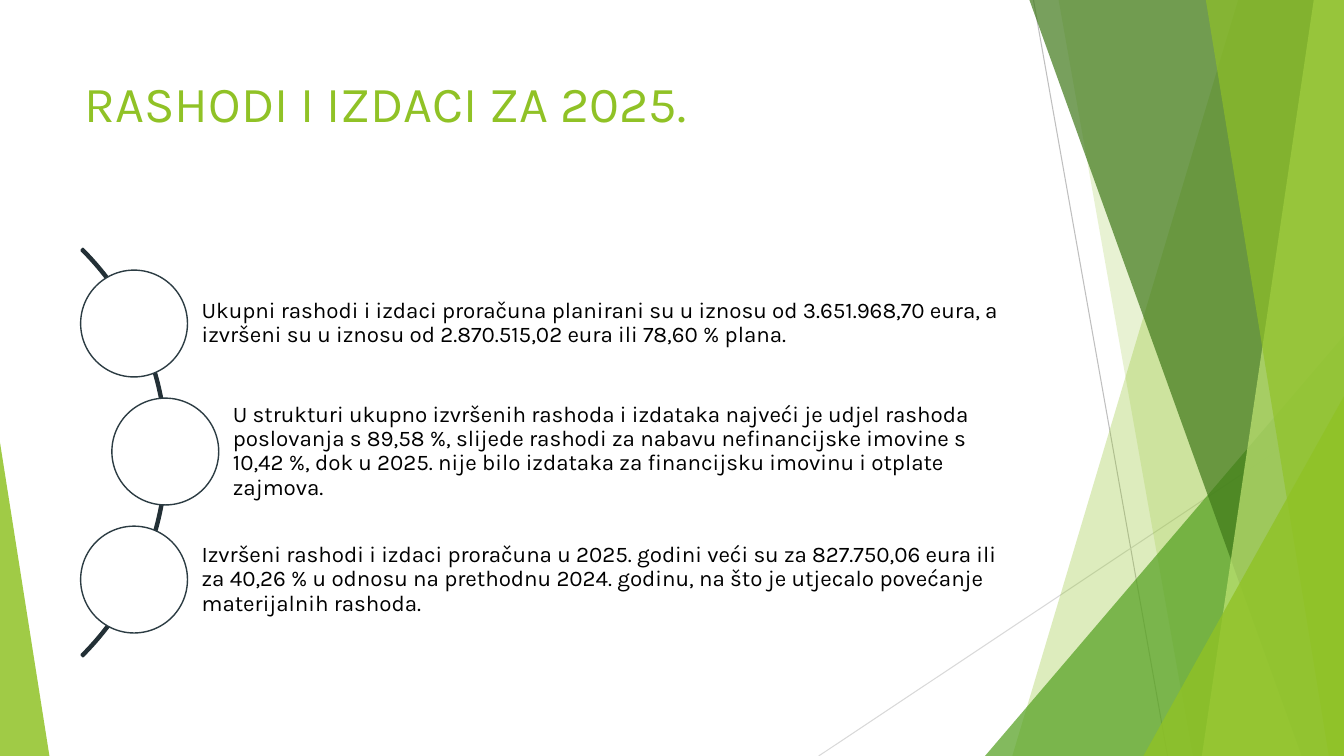
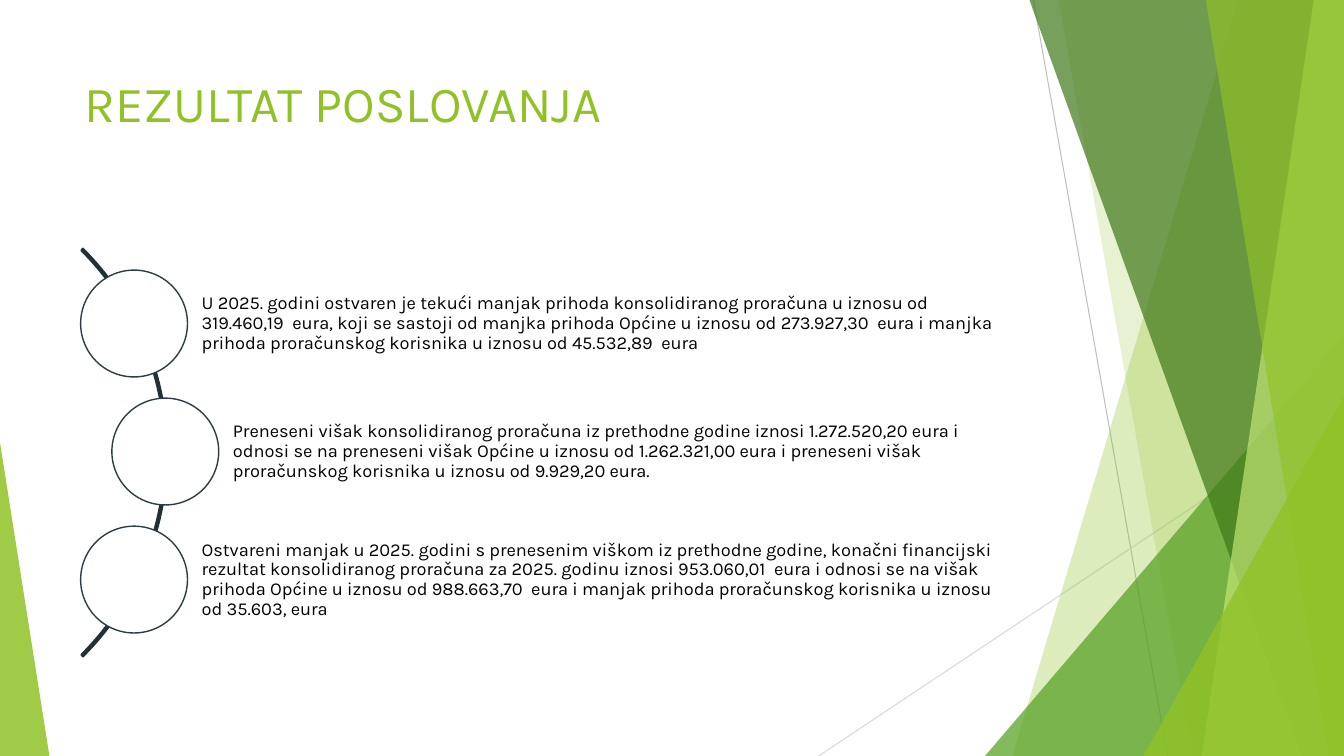
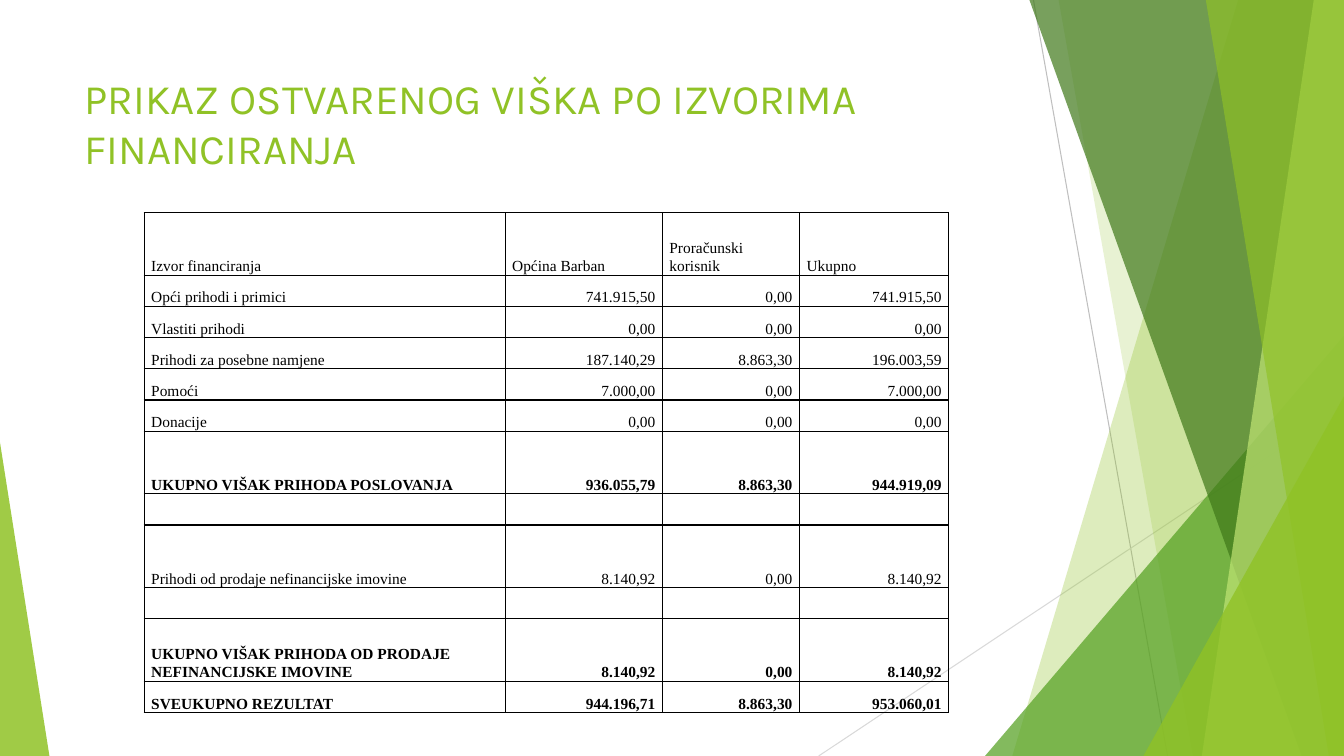
from dataclasses import dataclass
from typing import Any

from lxml.etree import SubElement
from pptx import Presentation
from pptx.dml.color import RGBColor
from pptx.enum.shapes import MSO_CONNECTOR as CONN, MSO_SHAPE as SHAPE
from pptx.enum.text import MSO_ANCHOR as ANCHOR, MSO_AUTO_SIZE as AUTO, PP_ALIGN as ALIGN
from pptx.oxml.ns import qn
from pptx.util import Inches, Pt

W, H = 13.33, 7.5


@dataclass(frozen=True)
class Theme:
    font: str = "Karla"
    table_font: str = "Times New Roman"
    lime: str = "90C226"
    leaf: str = "54A021"
    forest: str = "3F7819"
    pale: str = "C0E474"
    white: str = "FFFFFF"
    black: str = "000000"
    ring: str = "2C3C43"
    arc: str = "233036"
    title: int = 36
    long_title: int = 30
    text: int = 16
    small_text: int = 13
    cell: int = 11


T = Theme()


# Formatting helpers
def apply(obj: Any, **values: Any) -> None:
    for name, value in values.items():
        setattr(obj, name, value)


def box(*lengths: float) -> list:
    return [Inches(v) for v in lengths]


def write(p: Any, text: str, size: int, color: str, font: str = T.font,
          bold: bool = False, **para: Any) -> None:
    apply(p, **para)
    r = p.add_run()
    r.text = text
    apply(r.font, name=font, size=Pt(size), bold=bold)
    r.font.color.rgb = RGBColor.from_string(color)


def paint(sp: Any, fill: str = "", alpha: int = 100, line: str = "", width: float = 1) -> None:
    sp.shadow.inherit = False
    if fill:
        sp.fill.solid()
        sp.fill.fore_color.rgb = RGBColor.from_string(fill)
        if alpha < 100:
            clr = sp.element.spPr.find(qn("a:solidFill")).find(qn("a:srgbClr"))
            SubElement(clr, qn("a:alpha"), val=str(alpha * 1000))
    else:
        sp.fill.background()
    if line:
        sp.line.color.rgb = RGBColor.from_string(line)
        sp.line.width = Pt(width)
    else:
        sp.line.fill.background()


# Shared background
@dataclass(frozen=True)
class Ray:
    x1: float
    y1: float
    x2: float
    color: str

    def draw(self, shapes: Any) -> Any:
        cx = shapes.add_connector(CONN.STRAIGHT, *box(self.x1, self.y1, self.x2, H))
        cx.line.color.rgb = RGBColor.from_string(self.color)
        cx.line.width = Pt(0.75)
        SubElement(cx.element.spPr, qn("a:effectLst"))
        return cx


@dataclass(frozen=True)
class Facet:
    """Band with a slanted left edge that reaches the right side of the slide."""
    top_x: float
    bottom_x: float
    color: str
    alpha: int

    def draw(self, shapes: Any) -> Any:
        fb = shapes.build_freeform(*box(self.top_x, 0))
        fb.add_line_segments([box(W, 0), box(W, H), box(self.bottom_x, H)], close=True)
        sp = fb.convert_to_shape()
        paint(sp, self.color, self.alpha)
        return sp


@dataclass(frozen=True)
class Wedge:
    """Triangle standing on the bottom edge; apex is 0 for left, 1 for right."""
    left: float
    top: float
    width: float
    apex: float
    color: str
    alpha: int

    def draw(self, shapes: Any) -> Any:
        sp = shapes.add_shape(SHAPE.ISOSCELES_TRIANGLE,
                              *box(self.left, self.top, self.width, H - self.top))
        sp.adjustments[0] = self.apex
        paint(sp, self.color, self.alpha)
        return sp


BACKGROUND = [
    Ray(10.25, 0, 11.58, "BFBFBF"),
    Ray(W, 4.03, 8.12, "D9D9D9"),
    Facet(12.28, 10.04, T.lime, 30),
    Facet(10.5, 11.83, T.lime, 20),
    Wedge(9.77, 3.33, 3.56, 1, T.leaf, 72),
    Facet(10.21, 12.91, T.forest, 70),
    Facet(13.03, 11.92, T.pale, 70),
    Facet(11.96, 13.18, T.lime, 65),
    Wedge(11.34, 3.93, 1.99, 1, T.lime, 80),
    Wedge(0, 4.39, 0.49, 0, T.lime, 85),
]


def set_up_layout(layout: Any, slide: Any) -> None:
    """Draw the background through a slide, then move it behind the layout's placeholders."""
    tree = layout.shapes.element
    for i, part in enumerate(BACKGROUND):
        el = part.draw(slide.shapes).element
        el.xpath(".//p:cNvPr")[0].set("id", str(100 + i))
        tree.insert(2 + i, el)
    for ph in layout.placeholders:
        if ph.placeholder_format.idx == 0:
            left, top, width, height = box(0.74, 0.67, 9.4, 1.44)
            apply(ph, left=left, top=top, width=width, height=height)
            apply(ph.text_frame, vertical_anchor=ANCHOR.TOP, auto_size=AUTO.NONE)


def add_title(slide: Any, text: str, size: int) -> None:
    write(slide.shapes.title.text_frame.paragraphs[0], text, size, T.lime, alignment=ALIGN.LEFT)


# Three points along an arc
MID_Y, PITCH = 4.48, 1.27
RING, BAR_H, BAR_RIGHT = 1.06, 0.85, 10.08
ARC = 5.72
RING_LEFTS = (0.8, 1.11, 0.8)


def add_points(slide: Any, texts: list[str], size: int) -> None:
    shapes = slide.shapes
    sp = shapes.add_shape(SHAPE.BLOCK_ARC, *box(-4.06, MID_Y + 0.01 - ARC / 2, ARC, ARC))
    for i, value in enumerate((189, 27, 0.004)):
        sp.adjustments[i] = value
    paint(sp, line=T.arc, width=1.5)
    for i, (left, text) in enumerate(zip(RING_LEFTS, texts)):
        y = MID_Y + (i - 1) * PITCH
        bar_left = left + RING / 2
        bar = shapes.add_shape(SHAPE.RECTANGLE, *box(bar_left, y - BAR_H / 2,
                                                     BAR_RIGHT - bar_left, BAR_H))
        paint(bar, T.white)
        tf = bar.text_frame
        pad = Inches(0.04)
        apply(tf, word_wrap=True, vertical_anchor=ANCHOR.MIDDLE, margin_left=Inches(0.67),
              margin_right=pad, margin_top=pad, margin_bottom=pad)
        write(tf.paragraphs[0], text, size, T.black, alignment=ALIGN.LEFT, line_spacing=0.9)
        ring = shapes.add_shape(SHAPE.OVAL, *box(left, y - RING / 2, RING, RING))
        paint(ring, T.white, line=T.ring)


# Table of sources
@dataclass(frozen=True)
class Row:
    cells: tuple[str, ...] = ("",) * 4
    units: int = 1
    bold: bool = False
    fill: str = ""


COLS = (3.58, 1.56, 1.36, 1.48)
ROW_UNIT = 0.31
ROWS = [
    Row(("Izvor financiranja", "Općina Barban", "Proračunski korisnik", "Ukupno"), 2),
    Row(("Opći prihodi i primici", "741.915,50", "0,00", "741.915,50")),
    Row(("Vlastiti prihodi", "0,00", "0,00", "0,00")),
    Row(("Prihodi za posebne namjene", "187.140,29", "8.863,30", "196.003,59")),
    Row(("Pomoći", "7.000,00", "0,00", "7.000,00")),
    Row(("Donacije", "0,00", "0,00", "0,00")),
    Row(("UKUPNO VIŠAK PRIHODA POSLOVANJA", "936.055,79", "8.863,30", "944.919,09"),
        2, True, T.white),
    Row(),
    Row(("Prihodi od prodaje nefinancijske imovine", "8.140,92", "0,00", "8.140,92"), 2),
    Row(),
    Row(("UKUPNO VIŠAK PRIHODA OD PRODAJE NEFINANCIJSKE IMOVINE", "8.140,92", "0,00",
         "8.140,92"), 2, True),
    Row(("SVEUKUPNO REZULTAT", "944.196,71", "8.863,30", "953.060,01"), bold=True),
]


def add_borders(cell: Any) -> None:
    tc_pr = cell._tc.get_or_add_tcPr()
    for i, side in enumerate(("lnL", "lnR", "lnT", "lnB")):
        ln = SubElement(tc_pr, qn(f"a:{side}"), w=str(Pt(1)))
        SubElement(SubElement(ln, qn("a:solidFill")), qn("a:srgbClr"), val=T.black)
        tc_pr.insert(i, ln)


def add_sources(slide: Any) -> None:
    height = ROW_UNIT * sum(row.units for row in ROWS)
    table = slide.shapes.add_table(len(ROWS), len(COLS),
                                   *box(1.43, 2.11, sum(COLS), height)).table
    apply(table, first_row=False, horz_banding=False)
    for col, width in zip(table.columns, COLS):
        col.width = Inches(width)
    for i, row in enumerate(ROWS):
        table.rows[i].height = Inches(ROW_UNIT * row.units)
        for j, text in enumerate(row.cells):
            cell = table.cell(i, j)
            apply(cell, vertical_anchor=ANCHOR.BOTTOM, margin_left=Inches(0.07),
                  margin_right=Inches(0.07), margin_top=0, margin_bottom=0)
            if row.fill:
                cell.fill.solid()
                cell.fill.fore_color.rgb = RGBColor.from_string(row.fill)
            else:
                cell.fill.background()
            add_borders(cell)
            p = cell.text_frame.paragraphs[0]
            if text:
                write(p, text, T.cell, T.black, T.table_font, row.bold,
                      alignment=ALIGN.RIGHT if i and j else ALIGN.LEFT,
                      line_spacing=1.07, space_after=Pt(8))
            else:
                SubElement(p._p, qn("a:endParaRPr"), sz=str(T.cell * 100))


EXPENSES = [
    "Ukupni rashodi i izdaci proračuna planirani su u iznosu od 3.651.968,70 eura, a izvršeni "
    "su u iznosu od 2.870.515,02 eura ili 78,60 % plana.",
    "U strukturi ukupno izvršenih rashoda i izdataka najveći je udjel rashoda poslovanja s "
    "89,58 %, slijede rashodi za nabavu nefinancijske imovine s 10,42 %, dok u 2025. nije bilo "
    "izdataka za financijsku imovinu i otplate zajmova.",
    "Izvršeni rashodi i izdaci proračuna u 2025. godini veći su za 827.750,06 eura ili za "
    "40,26 % u odnosu na prethodnu 2024. godinu, na što je utjecalo povećanje materijalnih "
    "rashoda.",
]
RESULT = [
    "U 2025. godini ostvaren je tekući manjak prihoda konsolidiranog proračuna u iznosu od "
    "319.460,19  eura, koji se sastoji od manjka prihoda Općine u iznosu od 273.927,30  eura i "
    "manjka prihoda proračunskog korisnika u iznosu od 45.532,89  eura",
    "Preneseni višak konsolidiranog proračuna iz prethodne godine iznosi 1.272.520,20 eura i "
    "odnosi se na preneseni višak Općine u iznosu od 1.262.321,00 eura i preneseni višak "
    "proračunskog korisnika u iznosu od 9.929,20 eura.",
    "Ostvareni manjak u 2025. godini s prenesenim viškom iz prethodne godine, konačni "
    "financijski rezultat konsolidiranog proračuna za 2025. godinu iznosi 953.060,01  eura i "
    "odnosi se na višak prihoda Općine u iznosu od 988.663,70  eura i manjak prihoda "
    "proračunskog korisnika u iznosu od 35.603, eura",
]


def main() -> None:
    prs = Presentation()
    prs.slide_width, prs.slide_height = box(W, H)
    layout = prs.slide_layouts[5]
    expenses, result, sources = [prs.slides.add_slide(layout) for _ in range(3)]
    set_up_layout(layout, expenses)

    add_title(expenses, "RASHODI I IZDACI ZA 2025.", T.title)
    add_points(expenses, EXPENSES, T.text)

    add_title(result, "REZULTAT POSLOVANJA", T.title)
    add_points(result, RESULT, T.small_text)

    add_title(sources, "PRIKAZ OSTVARENOG VIŠKA PO IZVORIMA FINANCIRANJA", T.long_title)
    add_sources(sources)

    prs.save("out.pptx")


if __name__ == "__main__":
    main()
